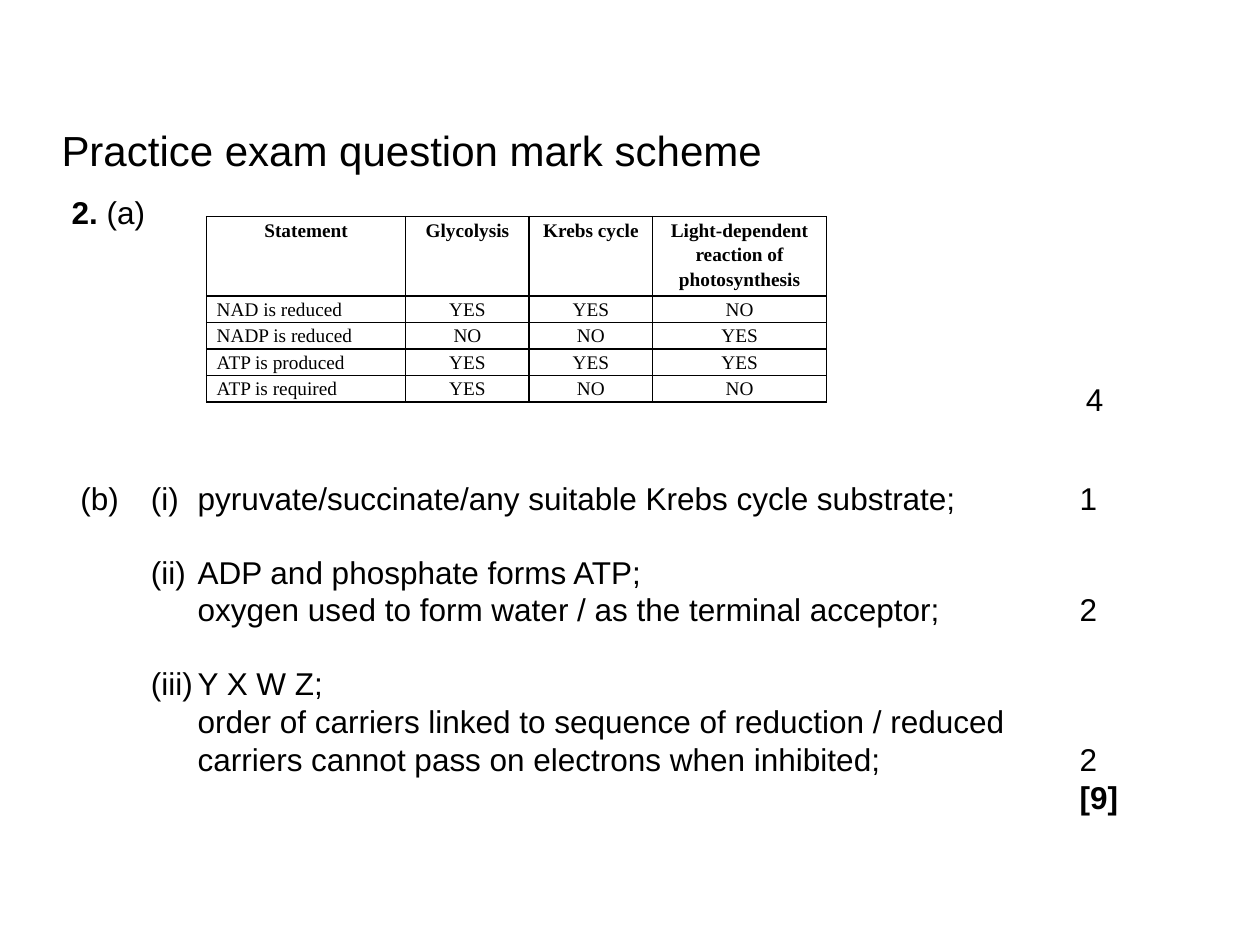
import pptx
import pptx.util
import pptx.dml.color
import pptx.enum.text
import pptx.oxml
import pptx.oxml.ns

CENTER = pptx.enum.text.PP_ALIGN.CENTER
LEFT = pptx.enum.text.PP_ALIGN.LEFT
NAMESPACE = pptx.oxml.ns.nsdecls("a")


def color(value):
    return pptx.dml.color.RGBColor.from_string(value)


def apply(target, values):
    for name, value in values.items():
        setattr(target, name, value)


class SlideBuilder:
    columns, rows = 100, 75
    ink = "000000"
    body_font, table_font = "Arial", "Times New Roman"
    table_paragraph = {
        "line_spacing": 1.15,
        "space_before": pptx.util.Pt(3),
        "space_after": pptx.util.Pt(3),
    }
    cell_margins = {
        "margin_left": pptx.util.Inches(0.08),
        "margin_right": pptx.util.Inches(0.08),
        "margin_top": 0,
        "margin_bottom": 0,
    }

    def __init__(self, presentation):
        self.unit_x = presentation.slide_width / self.columns
        self.unit_y = presentation.slide_height / self.rows
        self.slide = presentation.slides.add_slide(presentation.slide_layouts[6])

    def across(self, columns):
        return round(columns * self.unit_x)

    def down(self, rows):
        return round(rows * self.unit_y)

    def run(self, paragraph, text, size, bold=False, font=body_font):
        run = paragraph.add_run()
        run.text = text
        apply(run.font, {"name": font, "size": pptx.util.Pt(size), "bold": bold})
        run.font.color.rgb = color(self.ink)

    def text(self, left, top, width, height, runs, size=18):
        shape = self.slide.shapes.add_textbox(
            self.across(left), self.down(top), self.across(width), self.down(height))
        shape.text_frame.word_wrap = True
        for text, bold in runs:
            self.run(shape.text_frame.paragraphs[0], text, size, bold)
        return shape

    def tab_stops(self, paragraph, stops):
        tabs = "".join(f'<a:tab pos="{self.across(stop)}" algn="l"/>' for stop in stops)
        properties = paragraph._p.get_or_add_pPr()
        properties.append(pptx.oxml.parse_xml(f"<a:tabLst {NAMESPACE}>{tabs}</a:tabLst>"))

    def answers(self, left, top, width, height, stops, groups, total, size=18):
        frame = self.text(left, top, width, height, []).text_frame
        lines = [(line, index > 0 and first == 0, False)
                 for index, group in enumerate(groups)
                 for first, line in enumerate(group)]
        lines.append((("", "", "", total), False, True))
        for index, (line, gap, bold) in enumerate(lines):
            paragraph = frame.add_paragraph() if index else frame.paragraphs[0]
            paragraph.space_before = pptx.util.Pt(size * 1.15 if gap else 0)
            self.tab_stops(paragraph, stops)
            self.run(paragraph, "\t" + "\t".join(line).rstrip("\t"), size, bold)

    def borders(self, cell):
        properties = cell._tc.get_or_add_tcPr()
        for side in "LRTB":
            properties.append(pptx.oxml.parse_xml(
                f'<a:ln{side} {NAMESPACE} w="{pptx.util.Pt(1)}"><a:solidFill>'
                f'<a:srgbClr val="{self.ink}"/></a:solidFill></a:ln{side}>'))

    def table(self, left, top, widths, heights, content):
        table = self.slide.shapes.add_table(
            len(heights), len(widths), self.across(left), self.down(top),
            self.across(sum(widths)), self.down(sum(heights))).table
        apply(table, {"first_row": False, "horz_banding": False})
        for column, width in zip(table.columns, widths):
            column.width = self.across(width)
        for row_index, (row, height) in enumerate(zip(table.rows, heights)):
            row.height = self.down(height)
            for column_index, cell in enumerate(row.cells):
                header = row_index == 0
                apply(cell, self.cell_margins)
                self.borders(cell)
                cell.fill.background()
                paragraph = cell.text_frame.paragraphs[0]
                apply(paragraph, self.table_paragraph)
                paragraph.alignment = CENTER if header or column_index else LEFT
                self.run(paragraph, content[row_index][column_index], 11, header,
                         self.table_font)


def main():
    presentation = pptx.Presentation()
    apply(presentation, {"slide_width": pptx.util.Inches(10),
                         "slide_height": pptx.util.Inches(7.5)})
    builder = SlideBuilder(presentation)
    builder.table(16.4, 17.2, [15.8, 9.8, 9.8, 13.8], [6.3] + [2.1] * 4, [
        ("Statement", "Glycolysis", "Krebs cycle",
         "Light-dependent reaction of photosynthesis"),
        ("NAD is reduced", "YES", "YES", "NO"),
        ("NADP is reduced", "NO", "NO", "YES"),
        ("ATP is produced", "YES", "YES", "YES"),
        ("ATP is required", "YES", "NO", "NO"),
    ])
    builder.text(4.7, 14.8, 10.2, 4, [("2. ", True), ("(a)", False)])
    builder.text(3.9, 9.4, 66.4, 5.1, [("Practice exam question mark scheme", False)], 24)
    builder.answers(4.7, 37.5, 86.7, 31.3, [0.7, 6.3, 10, 80], [
        [("(b)", "(i)", "pyruvate/succinate/any suitable Krebs cycle substrate;", "1")],
        [("", "(ii)", "ADP and phosphate forms ATP;", ""),
         ("", "", "oxygen used to form water / as the terminal acceptor;", "2")],
        [("", "(iii)", "Y X W Z;", ""),
         ("", "", "order of carriers linked to sequence of reduction / reduced", ""),
         ("", "", "carriers cannot pass on electrons when inhibited;", "2")],
    ], "[9]")
    builder.text(85.2, 29.7, 6.2, 4, [("4", False)])
    presentation.save("out.pptx")


if __name__ == "__main__":
    main()
